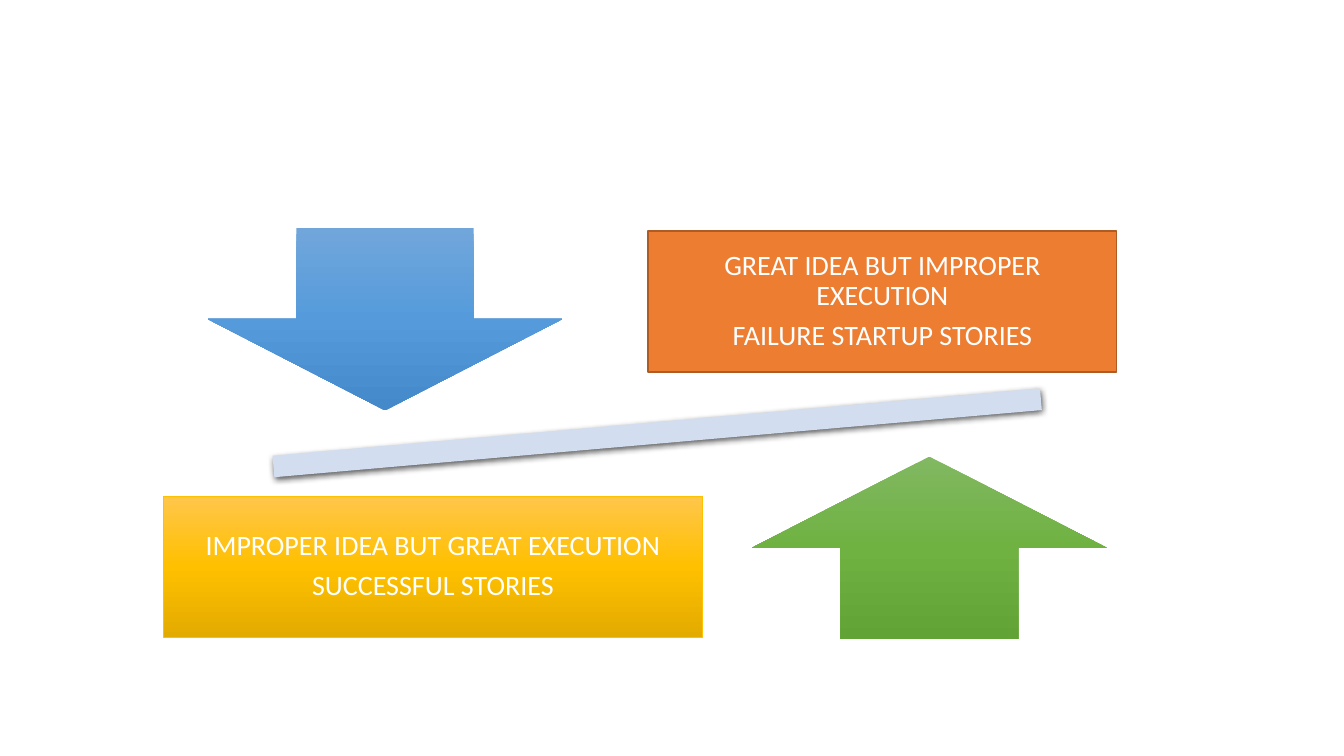
from copy import deepcopy
from dataclasses import dataclass

from lxml import etree
from pptx import Presentation
from pptx.dml.color import RGBColor
from pptx.enum.shapes import MSO_SHAPE
from pptx.enum.text import MSO_ANCHOR, PP_ALIGN
from pptx.oxml.ns import qn
from pptx.shapes.autoshape import Shape
from pptx.slide import Slide
from pptx.util import Pt

MINUS = MSO_SHAPE.MATH_MINUS
DOWN = MSO_SHAPE.DOWN_ARROW
UP = MSO_SHAPE.UP_ARROW
RECT = MSO_SHAPE.RECTANGLE
MIDDLE = MSO_ANCHOR.MIDDLE
CENTER = PP_ALIGN.CENTER

COLORS = {
    "beam": "D2DEEF",
    "shade": "000000",
    "text": "FFFFFF",
    "orange": "ED7D31",
    "rust": "AF5C24",
    "gold": "FFC000",
    "gold top": "FFC64B",
    "gold base": "E3AB00",
    "blue": "559BDB",
    "blue top": "71A6DB",
    "blue base": "448ACA",
    "green": "6FB242",
    "green top": "81B861",
    "green base": "62A336",
}
ARROW = (253.44, 130.32)
INSET = Pt(11.52)


@dataclass
class Part:
    kind: MSO_SHAPE
    left: float
    top: float
    width: float
    height: float
    fills: tuple[str, ...]
    edge: str = ""
    weight: float = 0
    turn: float = 0
    lines: tuple[str, ...] = ()


PARTS = [
    Part(MINUS, 95.04, 276.48, 748.8, 65.52, ("beam",), turn=355),
    Part(DOWN, 148.32, 162.72, *ARROW, ("blue top", "blue", "blue base")),
    Part(RECT, 462.96, 164.88, 334.8, 100.8, ("orange",), "rust", 1,
         lines=("GREAT IDEA BUT IMPROPER EXECUTION", "FAILURE STARTUP STORIES")),
    Part(UP, 537.12, 326.16, *ARROW, ("green top", "green", "green base")),
    Part(RECT, 116.64, 354.24, 385.2, 100.8, ("gold top", "gold", "gold base"), "gold", 0.5,
         lines=("IMPROPER IDEA BUT GREAT EXECUTION", "SUCCESSFUL STORIES")),
]


def color(name: str) -> RGBColor:
    return RGBColor.from_string(COLORS[name])


def paint(shape: Shape, fills: tuple[str, ...]) -> None:
    fill = shape.fill
    if len(fills) == 1:
        fill.solid()
        fill.fore_color.rgb = color(fills[0])
        return
    fill.gradient()
    fill.gradient_angle = 270
    stops = shape.element.spPr.find(".//" + qn("a:gsLst"))
    stops.append(deepcopy(stops[0]))
    for index, (stop, name) in enumerate(zip(fill.gradient_stops, fills)):
        stop.position = index / (len(fills) - 1)
        stop.color.rgb = color(name)


def shade(shape: Shape) -> None:
    effects = shape.element.spPr.find(qn("a:effectLst"))
    outer = etree.SubElement(effects, qn("a:outerShdw"), blurRad=str(Pt(4.5)),
                             dist=str(Pt(1.5)), dir="5400000", rotWithShape="0")
    tint = etree.SubElement(outer, qn("a:srgbClr"), val=COLORS["shade"])
    etree.SubElement(tint, qn("a:alpha"), val="63000")


def write(shape: Shape, lines: tuple[str, ...]) -> None:
    frame = shape.text_frame
    frame.word_wrap = True
    frame.vertical_anchor = MIDDLE
    frame.margin_left = frame.margin_right = INSET
    frame.margin_top = frame.margin_bottom = INSET
    frame.text = "\n".join(lines)
    for para in frame.paragraphs:
        para.alignment = CENTER
        para.line_spacing = 0.9
        para.space_after = Pt(7)
        para.font.name = "Calibri"
        para.font.size = Pt(20)
        para.font.color.rgb = color("text")


def draw(slide: Slide, part: Part) -> None:
    shape = slide.shapes.add_shape(part.kind, Pt(part.left), Pt(part.top),
                                   Pt(part.width), Pt(part.height))
    shape.rotation = part.turn
    shape.shadow.inherit = False
    paint(shape, part.fills)
    if part.edge:
        shape.line.color.rgb = color(part.edge)
        shape.line.width = Pt(part.weight)
    else:
        shape.line.fill.background()
    if part.kind == MINUS:
        shade(shape)
    if part.lines:
        write(shape, part.lines)


def main() -> None:
    deck = Presentation()
    deck.slide_width = Pt(960)
    deck.slide_height = Pt(540)
    slide = deck.slides.add_slide(deck.slide_layouts[6])
    for part in PARTS:
        draw(slide, part)
    deck.save("out.pptx")


if __name__ == "__main__":
    main()
